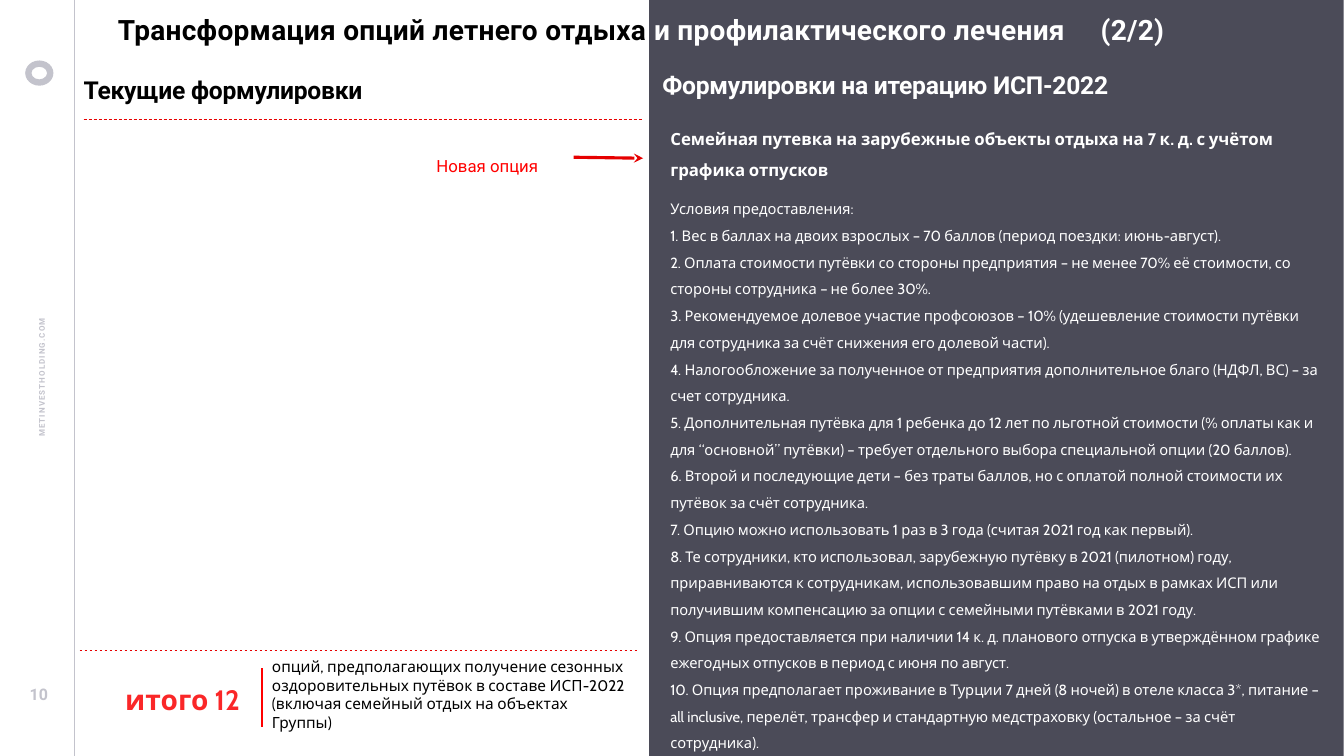
"""Builds the slide on the summer holiday options, part 2 of 2."""
from lxml import etree
from pptx import Presentation
from pptx.dml.color import RGBColor
from pptx.enum.dml import MSO_LINE
from pptx.enum.shapes import MSO_CONNECTOR, MSO_SHAPE
from pptx.enum.text import MSO_ANCHOR, PP_ALIGN
from pptx.oxml.ns import qn
from pptx.util import Pt

STRAIGHT = MSO_CONNECTOR.STRAIGHT
DASH = MSO_LINE.DASH
RECT, DONUT = MSO_SHAPE.RECTANGLE, MSO_SHAPE.DONUT
TOP, MIDDLE = MSO_ANCHOR.TOP, MSO_ANCHOR.MIDDLE
LEFT, CENTER, RIGHT = PP_ALIGN.LEFT, PP_ALIGN.CENTER, PP_ALIGN.RIGHT

BLACK = RGBColor(0x00, 0x00, 0x00)
WHITE = RGBColor(0xFF, 0xFF, 0xFF)
PALE = RGBColor(0xC3, 0xC3, 0xCC)
SLATE = RGBColor(0x4B, 0x4B, 0x58)
RED = RGBColor(0xFF, 0x00, 0x00)
DEEP_RED = RGBColor(0xE6, 0x00, 0x00)
TOTAL_RED = RGBColor(0xFA, 0x27, 0x28)

HEADING_FONT, BODY_FONT = "Roboto", "Cabin"
NO_GRID_STYLE = "{2D5ABB26-0587-4C30-8999-92F81FD0307C}"

OPTION = ("Семейная путевка на зарубежные объекты отдыха на 7 к. д. "
          "с учётом графика отпусков")
CONDITIONS = [
    "Условия предоставления:",
    "1. Вес в баллах на двоих взрослых – 70 баллов (период поездки: июнь-август).",
    "2. Оплата стоимости путёвки со стороны предприятия – не менее 70% её "
    "стоимости, со стороны сотрудника – не более 30%.",
    "3. Рекомендуемое долевое участие профсоюзов – 10% (удешевление стоимости "
    "путёвки для сотрудника за счёт снижения его долевой части).",
    "4. Налогообложение за полученное от предприятия дополнительное благо "
    "(НДФЛ, ВС) – за счет сотрудника.",
    "5. Дополнительная путёвка для 1 ребенка до 12 лет по льготной стоимости "
    "(% оплаты как и для “основной” путёвки) – требует отдельного выбора "
    "специальной опции (20 баллов).",
    "6. Второй и последующие дети – без траты баллов, но с оплатой полной "
    "стоимости их путёвок за счёт сотрудника.",
    "7. Опцию можно использовать 1 раз в 3 года (считая 2021 год как первый).",
    "8. Те сотрудники, кто использовал, зарубежную путёвку в 2021 (пилотном) "
    "году, приравниваются к сотрудникам, использовавшим право на отдых в рамках "
    "ИСП или получившим компенсацию за опции с семейными путёвками в 2021 году.",
    "9. Опция предоставляется при наличии 14 к. д. планового отпуска в "
    "утверждённом графике ежегодных отпусков в период с июня по август.",
    "10. Опция предполагает проживание в Турции 7 дней (8 ночей) в отеле класса "
    "3*, питание – all inclusive, перелёт, трансфер и стандартную медстраховку "
    "(остальное – за счёт сотрудника).",
]


class SlideBuilder:
    """Holds the slide and draws each kind of element on it."""

    def __init__(self, slide):
        self.s = slide

    def shape(self, kind, x, y, w, h, color):
        sp = self.s.shapes.add_shape(kind, Pt(x), Pt(y), Pt(w), Pt(h))
        sp.shadow.inherit = False
        sp.fill.solid()
        sp.fill.fore_color.rgb = color
        sp.line.fill.background()
        return sp

    def line(self, x1, y1, x2, y2, color, width, dash=None, arrow=False):
        cn = self.s.shapes.add_connector(STRAIGHT, Pt(x1), Pt(y1), Pt(x2), Pt(y2))
        cn.line.color.rgb = color
        cn.line.width = Pt(width)
        if dash:
            cn.line.dash_style = dash
        if arrow:
            ln = cn.line._get_or_add_ln()
            etree.SubElement(ln, qn("a:tailEnd"), type="stealth")
        etree.SubElement(cn._element.spPr, qn("a:effectLst"))

    def run(self, p, text, size, color, font=HEADING_FONT, bold=False, spacing=0):
        r = p.add_run()
        r.text = text
        r.font.size = Pt(size)
        r.font.name = font
        r.font.bold = bold
        r.font.color.rgb = color
        if spacing:
            r.font._element.set("spc", str(round(spacing * 100)))

    def text(self, x, y, w, h, align=LEFT, anchor=TOP, inset=(0, 0), leading=None):
        sp = self.s.shapes.add_textbox(Pt(x), Pt(y), Pt(w), Pt(h))
        tf = sp.text_frame
        tf.word_wrap = True
        tf.vertical_anchor = anchor
        tf.margin_left = tf.margin_right = Pt(inset[0])
        tf.margin_top = tf.margin_bottom = Pt(inset[1])
        p = tf.paragraphs[0]
        p.alignment = align
        if leading:
            p.line_spacing = leading
        return sp, p

    def table_cell(self, x, y, w, h):
        table = self.s.shapes.add_table(1, 1, Pt(x), Pt(y), Pt(w), Pt(h)).table
        table.first_row = table.horz_banding = False
        table._tbl.tblPr.find(qn("a:tableStyleId")).text = NO_GRID_STYLE
        cell = table.cell(0, 0)
        cell.fill.background()
        cell.vertical_anchor = MIDDLE
        cell.margin_left = cell.margin_right = 0
        cell.margin_top = cell.margin_bottom = 0
        return cell.text_frame

    def heading(self, x, y, text, color):
        _, p = self.text(x, y, 404.64, 20.88, leading=0.9)
        self.run(p, text, 17.6, color, bold=True, spacing=-0.2)


def draw_sidebar(b):
    b.shape(DONUT, 18, 43.2, 20.16, 18, PALE)
    sp, p = b.text(-187.2, 259.92, 430.56, 19.44, CENTER, MIDDLE, leading=1.5)
    sp.rotation = 270
    b.run(p, "METINVESTHOLDING.COM", 5.7, PALE, bold=True, spacing=0.8)
    b.line(53.28, 540, 53.28, 0, PALE, 0.5)
    _, p = b.text(0, 485.28, 55.44, 20.88, CENTER, inset=(7.2, 3.6))
    b.run(p, "10", 11.4, PALE, bold=True)


def draw_headings(b):
    b.shape(RECT, 463.68, 0, 496.08, 540, SLATE)
    b.heading(59.76, 56.16, "Текущие формулировки", BLACK)
    b.heading(473.04, 52.56, "Формулировки на итерацию ИСП-2022", WHITE)
    _, p = b.text(84.24, 8.64, 789.84, 33.84)
    tabs = etree.SubElement(p._p.get_or_add_pPr(), qn("a:tabLst"))
    etree.SubElement(tabs, qn("a:tab"), pos=str(Pt(702)), algn="l")
    for text, color in (("Трансформация опций летнего отдыха ", BLACK),
                        ("и профилактического лечения\t(2/2)", WHITE)):
        b.run(p, text, 20, color, bold=True, spacing=0.2)


def draw_new_option(b):
    p = b.table_cell(59.76, 100.8, 375.12, 36).paragraphs[0]
    p._p.get_or_add_pPr().set("marL", str(Pt(252)))
    b.run(p, "Новая опция", 12, RED)
    b.line(409.68, 112.32, 459.36, 113.04, DEEP_RED, 2.25, arrow=True)

    tf = b.table_cell(478.8, 84.96, 469.44, 434.88)
    p = tf.paragraphs[0]
    p.line_spacing = 1.5
    b.run(p, OPTION, 12, WHITE, BODY_FONT, bold=True)
    for i, condition in enumerate(CONDITIONS):
        p = tf.add_paragraph()
        p.line_spacing = 1.5
        if i == 0:
            p.space_before = Pt(8.1)
        b.run(p, condition, 10.5, WHITE, BODY_FONT)


def draw_total(b):
    _, p = b.text(187.2, 472.32, 269.28, 47.52, anchor=MIDDLE, inset=(7.2, 3.6))
    b.run(p, "опций, предполагающих получение сезонных оздоровительных путёвок "
             "в составе ИСП-2022 (включая семейный отдых на объектах Группы)",
          11, BLACK, BODY_FONT)
    _, p = b.text(87.84, 464.4, 83.52, 72.72, RIGHT, MIDDLE, leading=Pt(21))
    b.run(p, "итого 12", 20, TOTAL_RED, BODY_FONT, bold=True)
    b.line(187.2, 477.36, 187.2, 519.12, RED, 2)
    for x, y in ((59.76, 84.96), (56.88, 464.4)):
        b.line(x, y, x + 399.6, y, DEEP_RED, 0.5, DASH)


def main():
    prs = Presentation()
    prs.slide_width, prs.slide_height = Pt(960), Pt(540)
    b = SlideBuilder(prs.slides.add_slide(prs.slide_layouts[6]))
    draw_sidebar(b)
    draw_headings(b)
    draw_new_option(b)
    draw_total(b)
    prs.save("out.pptx")


if __name__ == "__main__":
    main()
